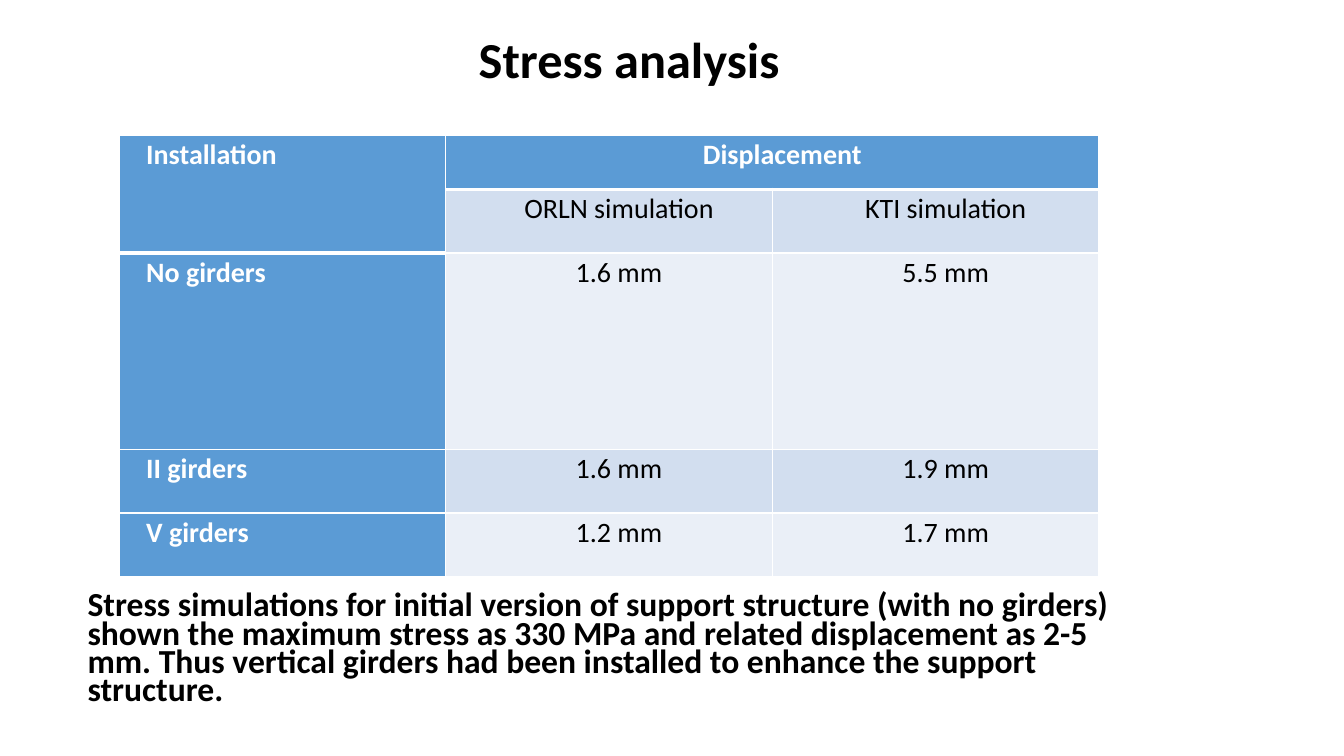
from lxml import etree
from pptx import Presentation
from pptx.dml.color import RGBColor
from pptx.enum.text import MSO_ANCHOR, PP_ALIGN
from pptx.oxml.ns import qn
from pptx.util import Inches, Pt

CENTER = PP_ALIGN.CENTER
LEFT = PP_ALIGN.LEFT
MIDDLE = MSO_ANCHOR.MIDDLE

BLACK = RGBColor(0x00, 0x00, 0x00)
WHITE = RGBColor(0xFF, 0xFF, 0xFF)
HEADER_BLUE = RGBColor(0x5B, 0x9B, 0xD5)
BAND_DARK = RGBColor(0xD2, 0xDE, 0xEF)
BAND_LIGHT = RGBColor(0xEA, 0xEF, 0xF7)

FONT = "Calibri"
COLUMN_WIDTH = 3.24
ROW_HEIGHTS = [0.54, 0.63, 1.95, 0.63, 0.63]
ROWS = [
    ["Installation", "Displacement", ""],
    ["", "ORLN simulation", "KTI simulation"],
    ["No girders", "1.6 mm", "5.5 mm"],
    ["II girders", "1.6 mm", "1.9 mm"],
    ["V girders", "1.2 mm", "1.7 mm"],
]
CONCLUSION = (
    "Stress simulations for initial version of support structure (with no girders) "
    "shown the maximum stress as 330 MPa and related displacement as 2-5 mm. "
    "Thus vertical girders had been installed to enhance the support structure."
)


def add_run(paragraph, text, size, color, bold):
    run = paragraph.add_run()
    run.text = text
    run.font.name = FONT
    run.font.size = Pt(size)
    run.font.bold = bold
    run.font.color.rgb = color


def add_text(slide, text, left, top, width, height, size, line_spacing):
    shape = slide.shapes.add_textbox(
        Inches(left), Inches(top), Inches(width), Inches(height)
    )
    frame = shape.text_frame
    frame.word_wrap = True
    frame.vertical_anchor = MIDDLE
    paragraph = frame.paragraphs[0]
    paragraph.line_spacing = line_spacing
    add_run(paragraph, text, size, BLACK, True)


def set_borders(cell, bottom_width):
    properties = cell._tc.get_or_add_tcPr()
    for side, width in (("L", 1), ("R", 1), ("T", 1), ("B", bottom_width)):
        line = etree.SubElement(properties, qn(f"a:ln{side}"), w=str(Pt(width)))
        fill = etree.SubElement(line, qn("a:solidFill"))
        etree.SubElement(fill, qn("a:srgbClr"), val=str(WHITE))


def fill_cell(cell, text, background, is_header, alignment, bottom_width):
    set_borders(cell, bottom_width)
    cell.fill.solid()
    cell.fill.fore_color.rgb = background
    cell.margin_left = cell.margin_right = Inches(0.07)
    cell.margin_top = cell.margin_bottom = 0
    if not text:
        return
    paragraph = cell.text_frame.paragraphs[0]
    paragraph.alignment = alignment
    paragraph.line_spacing = 1.07
    paragraph._p.get_or_add_pPr().set("marL", str(Inches(0.2)))
    add_run(paragraph, text, 20, WHITE if is_header else BLACK, is_header)


def add_displacement_table(slide):
    table = slide.shapes.add_table(
        len(ROWS), len(ROWS[0]), Inches(1.18), Inches(1.34),
        Inches(COLUMN_WIDTH * len(ROWS[0])), Inches(sum(ROW_HEIGHTS)),
    ).table
    for column in table.columns:
        column.width = Inches(COLUMN_WIDTH)
    for row, height in zip(table.rows, ROW_HEIGHTS):
        row.height = Inches(height)
    table.cell(0, 0).merge(table.cell(1, 0))
    table.cell(0, 1).merge(table.cell(0, 2))
    for row_index, texts in enumerate(ROWS):
        band = BAND_DARK if row_index % 2 else BAND_LIGHT
        for column_index, text in enumerate(texts):
            is_header = row_index == 0 or column_index == 0
            in_heading = row_index == 0 or (row_index == 1 and column_index == 0)
            fill_cell(
                table.cell(row_index, column_index), text,
                HEADER_BLUE if is_header else band, is_header,
                CENTER if column_index else LEFT,
                3 if in_heading else 1,
            )


def main():
    presentation = Presentation()
    presentation.slide_width = Inches(13.33)
    presentation.slide_height = Inches(7.5)
    slide = presentation.slides.add_slide(presentation.slide_layouts[6])
    add_text(slide, "Stress analysis", 4.65, 0.28, 3.83, 0.68, 36, 0.9)
    add_displacement_table(slide)
    add_text(slide, CONCLUSION, 0.77, 5.92, 10.38, 1.07, 24, 0.7)
    presentation.save("out.pptx")


if __name__ == "__main__":
    main()
